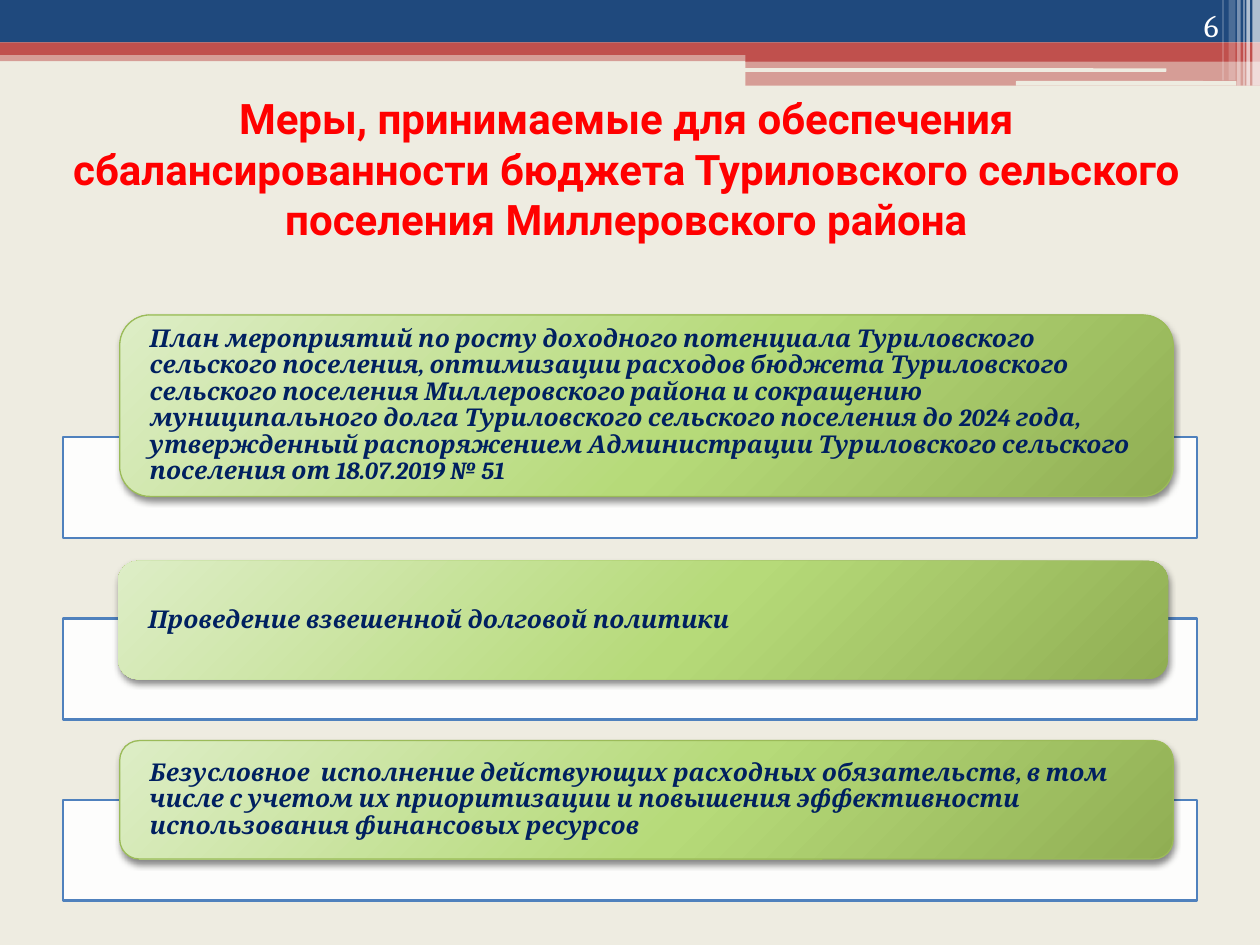
from lxml import etree
from pptx import Presentation
from pptx.dml.color import RGBColor
from pptx.enum.shapes import MSO_SHAPE
from pptx.enum.text import MSO_ANCHOR, PP_ALIGN
from pptx.oxml import parse_xml
from pptx.oxml.ns import qn
from pptx.util import Pt

RECT, ROUND = MSO_SHAPE.RECTANGLE, MSO_SHAPE.ROUNDED_RECTANGLE
LEFT, MID, RIGHT = PP_ALIGN.LEFT, PP_ALIGN.CENTER, PP_ALIGN.RIGHT
CENTER, BOTTOM = MSO_ANCHOR.MIDDLE, MSO_ANCHOR.BOTTOM

CREAM = RGBColor(0xEE, 0xEC, 0xE1)
BLUE = RGBColor(0x1F, 0x49, 0x7D)
BRICK = RGBColor(0xC0, 0x50, 0x4D)
WHITE = RGBColor(0xFF, 0xFF, 0xFF)
RED = RGBColor(0xFF, 0x00, 0x00)
NAVY = RGBColor(0x00, 0x20, 0x60)
EDGE = RGBColor(0x4F, 0x81, 0xBD)
GREEN = RGBColor(0x9B, 0xBB, 0x59)

NS = 'xmlns:a="http://schemas.openxmlformats.org/drawingml/2006/main"'
GRAD = f"""<a:gradFill {NS} rotWithShape="1"><a:gsLst>
<a:gs pos="0"><a:srgbClr val="DDEDC6"/></a:gs>
<a:gs pos="55000"><a:srgbClr val="B6DA79"/></a:gs>
<a:gs pos="100000"><a:srgbClr val="90AE53"/></a:gs></a:gsLst>
<a:path path="circle"><a:fillToRect l="-40000" t="-90000" r="140000" b="190000"/></a:path>
</a:gradFill>"""
SHADOW = f"""<a:outerShdw {NS} blurRad="50800" dist="25400" dir="5400000" rotWithShape="0">
<a:srgbClr val="000000"><a:alpha val="45000"/></a:srgbClr></a:outerShdw>"""

prs = Presentation()
prs.slide_width, prs.slide_height = Pt(720), Pt(540)
slide = prs.slides.add_slide(prs.slide_layouts[6])
slide.background.fill.solid()
slide.background.fill.fore_color.rgb = CREAM


def add_box(kind, x, y, w, h, color, alpha=100):
    box = slide.shapes.add_shape(kind, Pt(x), Pt(y), Pt(w), Pt(h))
    box.shadow.inherit = False
    box.line.fill.background()
    box.fill.solid()
    box.fill.fore_color.rgb = color
    if alpha < 100:
        tint = box._element.spPr.find(qn("a:solidFill"))[0]
        etree.SubElement(tint, qn("a:alpha")).set("val", str(alpha * 1000))
    return box


def add_text(box, text, font, size, color, align, anchor):
    frame = box.text_frame
    frame.word_wrap = True
    frame.vertical_anchor = anchor
    para = frame.paragraphs[0]
    para.alignment = align
    run = para.add_run()
    run.text = text
    run.font.name, run.font.size = font, Pt(size)
    run.font.color.rgb = color
    return para, run


# Header bands
for kind, x, y, w, h, color, alpha in [
    (RECT, 0, 28.8, 720, 6.2, BRICK, 50),
    (RECT, 0, 0, 720, 24.2, BLUE, 100),
    (RECT, 0, 24.2, 720, 7.2, BRICK, 100),
    (RECT, 426, 28, 294, 7.2, BRICK, 100),
    (RECT, 426, 35, 294, 14, BRICK, 50),
    (ROUND, 425.5, 39, 241, 2, CREAM, 100),
    (ROUND, 580.5, 46.3, 126, 2.7, CREAM, 100),
]:
    add_box(kind, x, y, w, h, color, alpha)

# Light stripes at the right edge
for x, w, h, alpha in [
    (715.7, 4.3, 49, 65), (712.2, 2, 49, 65), (710.5, 0.7, 49, 60),
    (707, 2, 49, 40), (702, 4, 46, 20), (698.5, 0.7, 46, 30),
]:
    add_box(RECT, x, 0, w, h, WHITE, alpha)

# Title
title = slide.shapes.add_textbox(Pt(34), Pt(73.5), Pt(648), Pt(73.5))
title.text_frame.margin_bottom = Pt(31.7)
para, run = add_text(
    title,
    "Меры, принимаемые для обеспечения сбалансированности бюджета "
    "Туриловского сельского поселения Миллеровского района",
    "Roboto", 24, RED, MID, CENTER)
run.font.bold = True

# Measures: a white panel with a green card over its top edge
MEASURES = [
    (68.4, 180, 602, 103.7, True,
     "План мероприятий по росту доходного потенциала Туриловского сельского "
     "поселения, оптимизации расходов бюджета Туриловского сельского поселения "
     "Миллеровского района и сокращению муниципального долга Туриловского "
     "сельского поселения до 2024 года,  утвержденный распоряжением "
     "Администрации Туриловского сельского поселения от 18.07.2019 № 51"),
    (67.5, 320.5, 600, 67.7, False, "Проведение взвешенной долговой политики"),
    (68.4, 423.2, 602, 67.7, True,
     "Безусловное  исполнение действующих расходных обязательств, в том числе "
     "с учетом их приоритизации и повышения эффективности использования "
     "финансовых ресурсов"),
]
for i, (x, y, w, h, edged, text) in enumerate(MEASURES):
    panel = add_box(RECT, 36, 249.8 + 103.7 * i, 648, 57.6, WHITE, 90)
    panel.line.color.rgb = EDGE
    panel.line.width = Pt(1.5)

    card = add_box(ROUND, x, y, w, h, GREEN)
    props = card._element.spPr
    props.replace(props.find(qn("a:solidFill")), parse_xml(GRAD))
    props.find(qn("a:effectLst")).append(parse_xml(SHADOW))
    if edged:
        card.line.color.rgb = GREEN
        card.line.width = Pt(0.75)
    frame = card.text_frame
    # Rounded corners already push the text in by about 0.05 of the height
    frame.margin_left = frame.margin_right = Pt(17.2 - 0.05 * h)
    frame.margin_top = frame.margin_bottom = 0
    para, run = add_text(card, text, "Cambria", 14, NAVY, LEFT, CENTER)
    para.line_spacing = 0.9
    run.font.bold = run.font.italic = True

# Page number
page = slide.shapes.add_textbox(Pt(643.7), Pt(0), Pt(59.8), Pt(28.8))
add_text(page, "6", "Cambria", 18, WHITE, RIGHT, BOTTOM)

prs.save("out.pptx")
